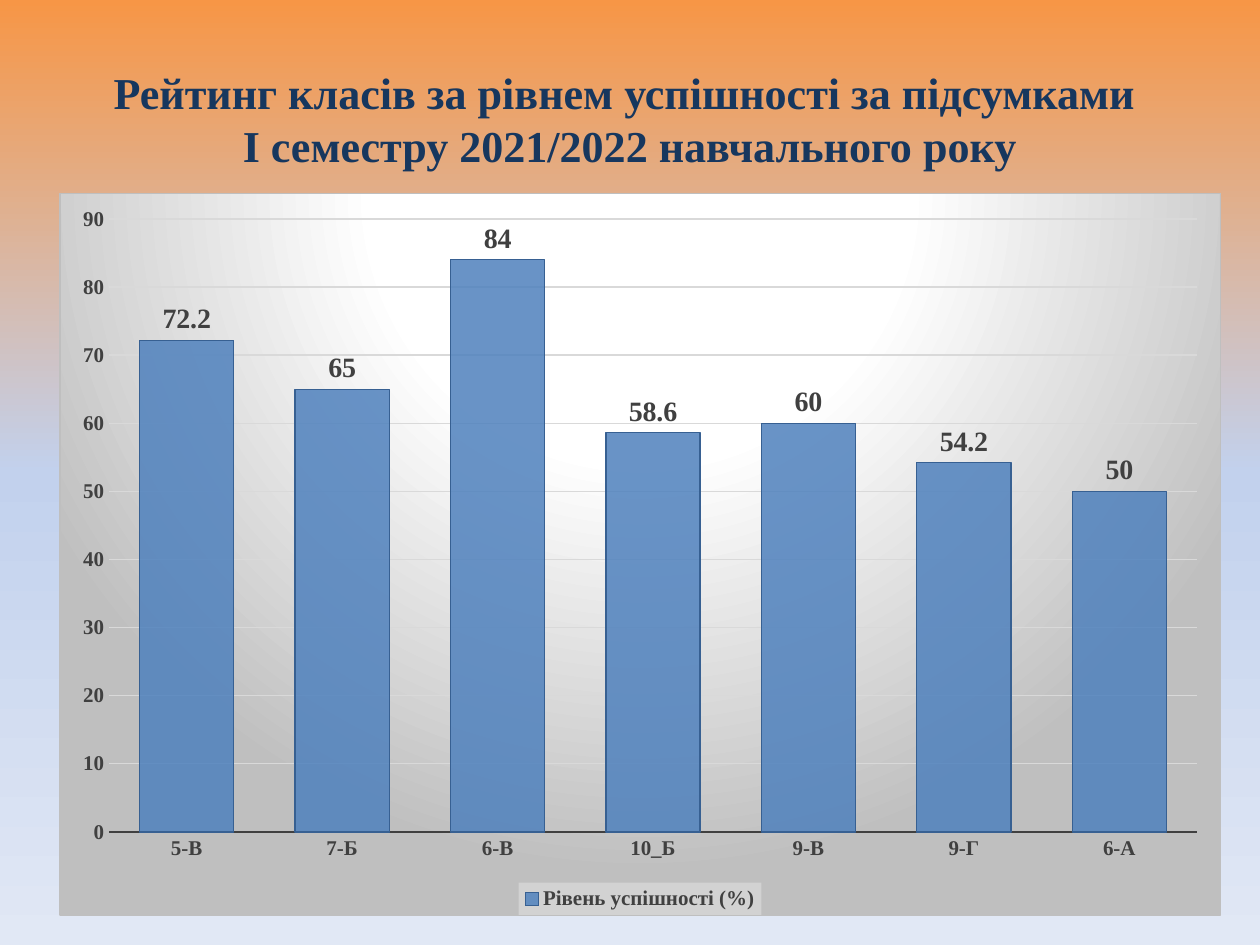
from dataclasses import dataclass

from lxml.etree import SubElement
from pptx import Presentation
from pptx.chart.data import CategoryChartData
from pptx.dml.color import RGBColor
from pptx.enum.chart import XL_CHART_TYPE as ChartType
from pptx.enum.chart import XL_LABEL_POSITION as LabelPosition
from pptx.enum.chart import XL_LEGEND_POSITION as LegendPosition
from pptx.enum.chart import XL_TICK_MARK as TickMark
from pptx.enum.text import MSO_ANCHOR as Anchor
from pptx.enum.text import PP_ALIGN as Align
from pptx.oxml import parse_xml
from pptx.oxml.ns import nsdecls, qn
from pptx.util import Inches, Pt


@dataclass(frozen=True)
class Theme:
    font: str = "Times New Roman"
    title: str = "17375E"
    text: str = "404040"
    grid: str = "D9D9D9"
    bar: str = "4F81BD"
    bar_edge: str = "376092"
    panel_edge: str = "BFBFBF"
    legend: str = "F2F2F2"
    background: tuple = ((0, "F79646"), (50, "C2D1ED"), (100, "E1E8F5"))
    panel: tuple = ((0, "FFFFFF"), (39, "FFFFFF"), (100, "BFBFBF"))
    title_size: float = 25.2
    axis_size: int = 12
    label_size: int = 16


theme = Theme()


def gradient_xml(stops, direction):
    """Gradient fill with any number of stops."""
    stop_list = "".join(
        f'<a:gs pos="{share * 1000}"><a:srgbClr val="{color}"/></a:gs>'
        for share, color in stops
    )
    return (f'<a:gradFill {nsdecls("a")} rotWithShape="1">'
            f"<a:gsLst>{stop_list}</a:gsLst>{direction}</a:gradFill>")


def set_font(font, size, color):
    font.name, font.size, font.bold = theme.font, Pt(size), True
    font.color.rgb = RGBColor.from_string(color)


presentation = Presentation()
presentation.slide_width, presentation.slide_height = Inches(10), Inches(7.5)
width, height = presentation.slide_width, presentation.slide_height
slide = presentation.slides.add_slide(presentation.slide_layouts[6])

# Background: vertical gradient
slide.background.fill.solid()
solid = slide.element.find(".//" + qn("a:solidFill"))
downward = '<a:lin ang="5400000" scaled="0"/>'
solid.getparent().replace(
    solid, parse_xml(gradient_xml(theme.background, downward)))

# Title
title = slide.shapes.add_textbox(
    int(width * 0.05), int(height * 0.04), int(width * 0.9), int(height * 0.17))
title.text_frame.word_wrap = True
title.text_frame.vertical_anchor = Anchor.MIDDLE
paragraph = title.text_frame.paragraphs[0]
paragraph.text = ("Рейтинг класів за рівнем успішності за підсумками \n"
                  "І семестру 2021/2022 навчального року")
paragraph.alignment = Align.CENTER
set_font(paragraph.font, theme.title_size, theme.title)

# Chart of class ratings
ratings = {"5-В": 72.2, "7-Б": 65, "6-В": 84, "10_Б": 58.6,
           "9-В": 60, "9-Г": 54.2, "6-А": 50}
chart_data = CategoryChartData()
chart_data.categories = list(ratings)
chart_data.add_series("Рівень успішності (%)", list(ratings.values()))
chart = slide.shapes.add_chart(
    ChartType.COLUMN_CLUSTERED, int(width * 0.047), int(height * 0.204),
    int(width * 0.922), int(height * 0.765), chart_data).chart
chart.has_title = False
set_font(chart.font, theme.axis_size, theme.text)

# Chart panel: radial gradient and thin border
radial = ('<a:path path="circle"><a:fillToRect l="50000" t="-80000" '
          'r="50000" b="180000"/></a:path>')
panel = parse_xml(
    f'<c:spPr {nsdecls("c", "a")}>{gradient_xml(theme.panel, radial)}'
    f'<a:ln w="{Pt(0.75)}"><a:solidFill><a:srgbClr val="{theme.panel_edge}"/>'
    "</a:solidFill></a:ln></c:spPr>")
chart.element.find(qn("c:chart")).addnext(panel)

# Axes
category_axis, value_axis = chart.category_axis, chart.value_axis
for axis in (category_axis, value_axis):
    axis.major_tick_mark = axis.minor_tick_mark = TickMark.NONE
    set_font(axis.tick_labels.font, theme.axis_size, theme.text)
category_axis.format.line.width = Pt(1.5)
category_axis.format.line.color.rgb = RGBColor.from_string(theme.text)
value_axis.format.line.fill.background()
value_axis.minimum_scale, value_axis.maximum_scale = 0, 90
value_axis.major_unit = 10
grid_line = value_axis.major_gridlines.format.line
grid_line.width = Pt(0.75)
grid_line.color.rgb = RGBColor.from_string(theme.grid)

# Bars and their labels
plot = chart.plots[0]
plot.gap_width = 65
plot.vary_by_categories = False
bars = plot.series[0]
bars.format.fill.solid()
bars.format.fill.fore_color.rgb = RGBColor.from_string(theme.bar)
bar_color = bars.format.fill._xPr.find(".//" + qn("a:srgbClr"))
SubElement(bar_color, qn("a:alpha"), val="85000")
bars.format.line.width = Pt(0.75)
bars.format.line.color.rgb = RGBColor.from_string(theme.bar_edge)
labels = bars.data_labels
labels.show_value = True
labels.position = LabelPosition.OUTSIDE_END
set_font(labels.font, theme.label_size, theme.text)

# Legend on a translucent patch
chart.has_legend = True
legend = chart.legend
legend.position = LegendPosition.BOTTOM
legend.include_in_layout = False
set_font(legend.font, theme.axis_size, theme.text)
patch = parse_xml(
    f'<c:spPr {nsdecls("c", "a")}><a:solidFill><a:srgbClr val="{theme.legend}">'
    '<a:alpha val="39000"/></a:srgbClr></a:solidFill></c:spPr>')
chart.element.find(".//" + qn("c:legend")).find(qn("c:txPr")).addprevious(patch)

presentation.save("out.pptx")
